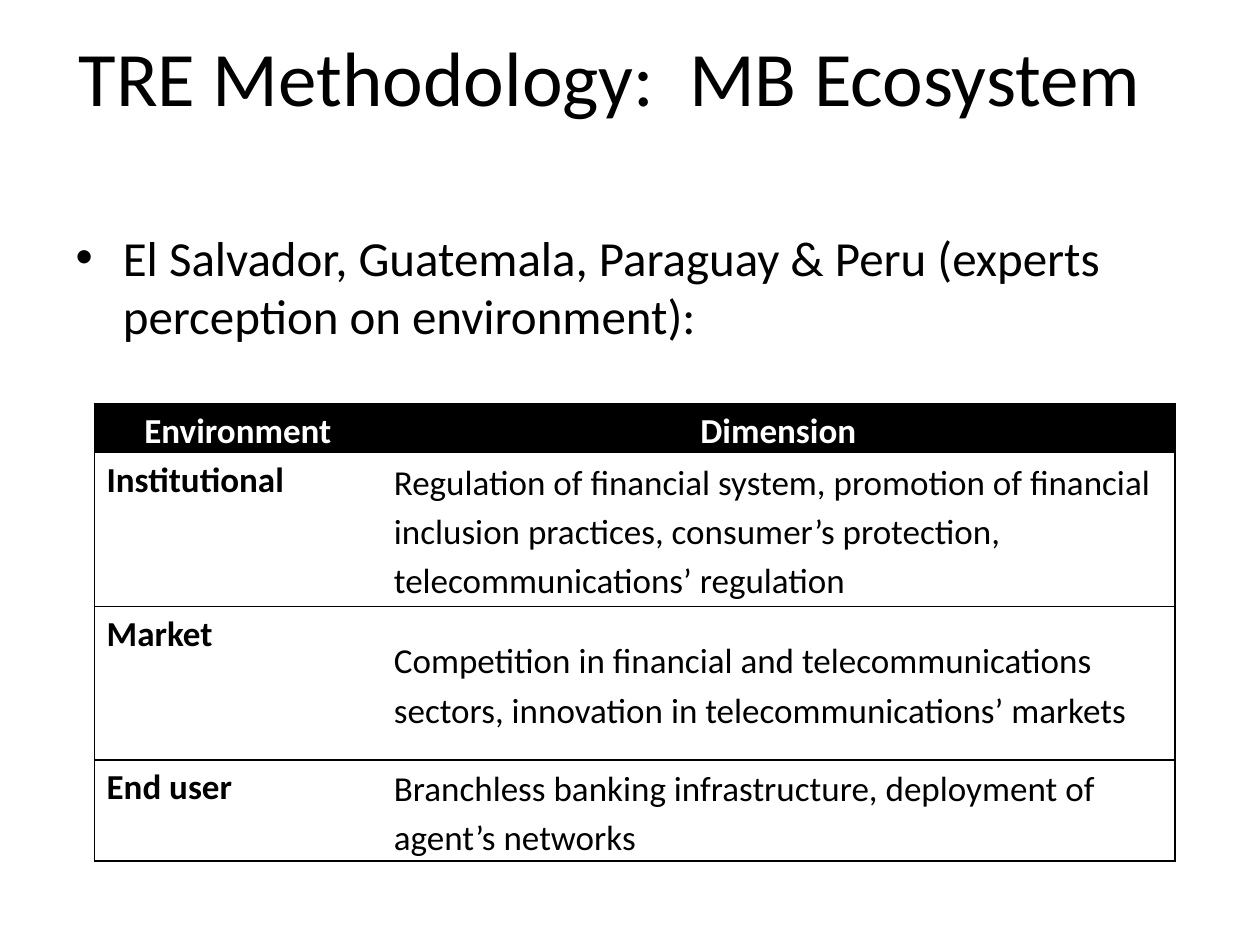
from lxml import etree
from pptx import Presentation
from pptx import util as u
from pptx.dml.color import RGBColor
from pptx.enum import text
from pptx.oxml.ns import qn

FONT = "Calibri"
HUES = {"ink": "000000", "paper": "FFFFFF"}
COLS = [5.79, 16]
ROWS = [0.99, 3.1, 3.1, 2.03]
CELLS = [
    ("Environment", "Dimension"),
    ("Institutional", "Regulation of financial system, promotion of financial "
     "inclusion practices, consumer’s protection, telecommunications’ regulation"),
    ("Market", "Competition in financial and telecommunications sectors, "
     "innovation in telecommunications’ markets"),
    ("End user", "Branchless banking infrastructure, deployment of agent’s networks"),
]


def style(par, size, hue="ink", bold=False):
    for run in par.runs:
        font = run.font
        font.name, font.size, font.bold = FONT, u.Pt(size), bold
        font.color.rgb = RGBColor.from_string(HUES[hue])


def place(item, words, size, box):
    """Move a placeholder, then give it its words."""
    item.left, item.top, item.width, item.height = map(u.Cm, box)
    item.text_frame.text = words
    item.text_frame.auto_size = text.MSO_AUTO_SIZE.NONE
    par = item.text_frame.paragraphs[0]
    style(par, size)
    return par


def add_title(slide):
    item = slide.shapes.title
    par = place(item, "TRE Methodology:  MB Ecosystem", 44,
                (1.27, 0.76, 22.86, 3.18))
    par.alignment = text.PP_ALIGN.CENTER
    frame = item.text_frame
    frame.vertical_anchor = text.MSO_ANCHOR.MIDDLE
    frame.margin_left = frame.margin_top = 0
    frame.margin_right, frame.margin_bottom = u.Cm(0.8), u.Cm(1.65)


def add_list(slide):
    place(slide.placeholders[1],
          "El Salvador, Guatemala, Paraguay & Peru "
          "(experts perception on environment):",
          28, (1.27, 4.45, 22.86, 12.57))


def set_edges(cell, drawn):
    """Draw the sides named in drawn and clear the others."""
    props = cell._tc.get_or_add_tcPr()
    for side in "LRTB":
        line = etree.SubElement(props, qn("a:ln" + side), w=str(u.Pt(1)))
        if side in drawn:
            fill = etree.SubElement(line, qn("a:solidFill"))
            etree.SubElement(fill, qn("a:srgbClr"), val=HUES["ink"])
        else:
            etree.SubElement(line, qn("a:noFill"))


def fill_cell(cell, words, row, col):
    head = row == 0
    cell.text_frame.text = words
    cell.margin_left = cell.margin_right = u.Cm(0.25)
    cell.margin_top = cell.margin_bottom = 0
    if col and not head:
        cell.vertical_anchor = text.MSO_ANCHOR.MIDDLE
    par = cell.text_frame.paragraphs[0]
    par.line_spacing = 1.15
    par.alignment = text.PP_ALIGN.CENTER if head else text.PP_ALIGN.LEFT
    style(par, 20, "paper" if head else "ink", head or col == 0)
    set_edges(cell, "RTB" if col else "LTB")
    if head:
        cell.fill.solid()
        cell.fill.fore_color.rgb = RGBColor.from_string(HUES["ink"])
    else:
        cell.fill.background()


def add_grid(slide):
    grid = slide.shapes.add_table(
        len(ROWS), len(COLS), u.Cm(1.9), u.Cm(8.13),
        u.Cm(sum(COLS)), u.Cm(sum(ROWS))).table
    grid.horz_banding = False
    for col, width in zip(grid.columns, COLS):
        col.width = u.Cm(width)
    for row, height in zip(grid.rows, ROWS):
        row.height = u.Cm(height)
    for r, line in enumerate(CELLS):
        for c, words in enumerate(line):
            fill_cell(grid.cell(r, c), words, r, c)


def main():
    deck = Presentation()
    deck.slide_width, deck.slide_height = u.Cm(25.4), u.Cm(19.05)
    slide = deck.slides.add_slide(deck.slide_layouts[1])
    add_title(slide)
    add_list(slide)
    add_grid(slide)
    deck.save("out.pptx")


if __name__ == "__main__":
    main()
